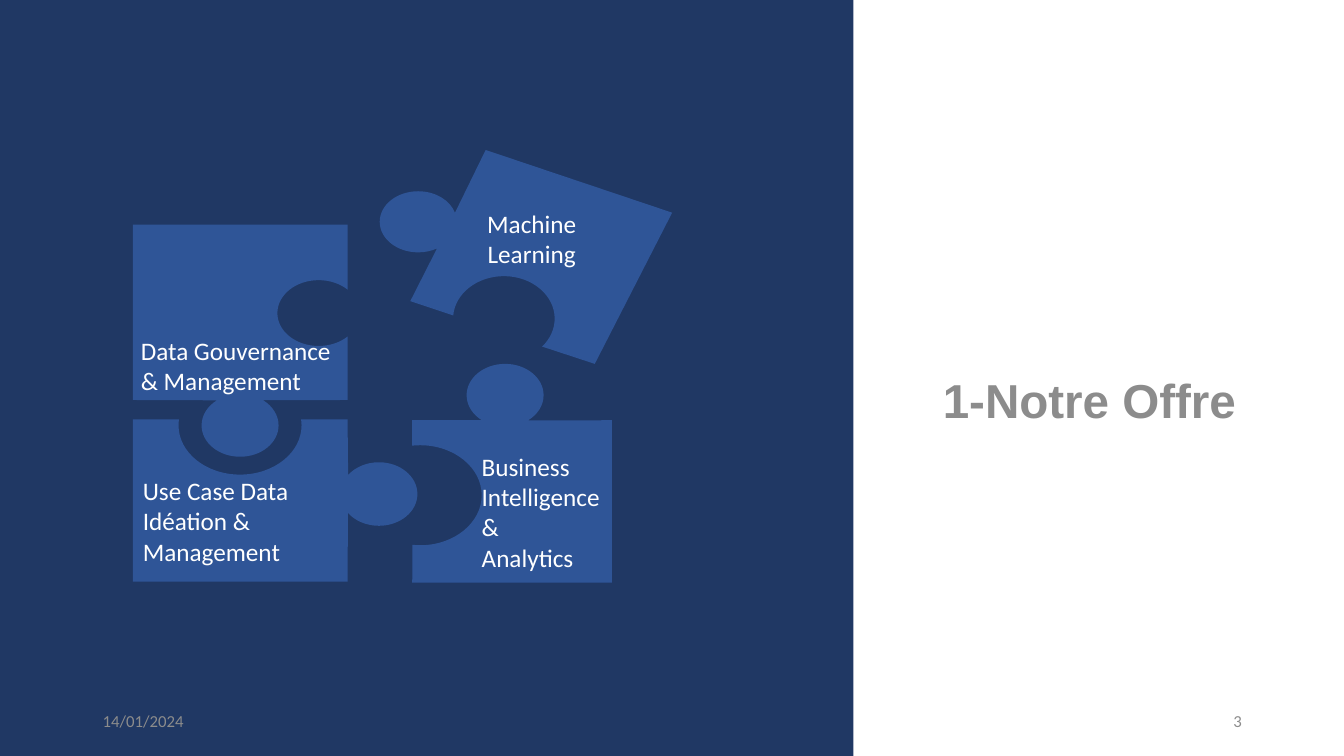
from dataclasses import dataclass
from math import atan2, ceil, cos, floor, pi, sin, tan
from typing import Union

from lxml import etree
from pptx import Presentation
from pptx.dml.color import RGBColor
from pptx.enum.shapes import MSO_SHAPE
from pptx.enum.text import MSO_ANCHOR, MSO_AUTO_SIZE, PP_ALIGN
from pptx.oxml.ns import qn
from pptx.shapes.base import BaseShape
from pptx.slide import Slide
from pptx.util import Cm, Pt

LEFT, CENTER, RIGHT = PP_ALIGN.LEFT, PP_ALIGN.CENTER, PP_ALIGN.RIGHT
MIDDLE = MSO_ANCHOR.MIDDLE
NO_AUTOFIT = MSO_AUTO_SIZE.NONE
RECTANGLE = MSO_SHAPE.RECTANGLE
TITLE_ONLY = 5
QUARTER = pi / 2

Point = tuple[float, float]


@dataclass(frozen=True)
class Theme:
    panel: RGBColor = RGBColor(0x20, 0x38, 0x64)
    piece: RGBColor = RGBColor(0x2F, 0x55, 0x97)
    label: RGBColor = RGBColor(0xFF, 0xFF, 0xFF)
    muted: RGBColor = RGBColor(0x8C, 0x8C, 0x8C)
    title_font: str = "Arial"
    body_font: str = "Calibri"
    title_size: int = 34
    label_size: int = 18
    footer_size: int = 12


@dataclass(frozen=True)
class Arc:
    center: Point
    radii: Point
    entry: Point
    exit: Point
    is_knob: bool

    def at(self, angle: float, slope: float = 0) -> Point:
        return (
            self.center[0] + self.radii[0] * (cos(angle) - slope * sin(angle)),
            self.center[1] + self.radii[1] * (sin(angle) + slope * cos(angle)),
        )

    def angles(self) -> list[float]:
        start, end = (
            atan2((y - self.center[1]) / self.radii[1], (x - self.center[0]) / self.radii[0])
            for x, y in (self.entry, self.exit)
        )
        low, high = (end, start) if self.is_knob else (start, end)
        high = low + (high - low) % (2 * pi)
        quarters = range(ceil(low / QUARTER), floor(high / QUARTER) + 1)
        steps = [low, *(QUARTER * quarter for quarter in quarters), high]
        return steps[::-1] if self.is_knob else steps


@dataclass(frozen=True)
class Label:
    lines: tuple[str, ...]
    left: float
    top: float
    width: float
    height: float
    align: PP_ALIGN = LEFT


@dataclass(frozen=True)
class Piece:
    outline: tuple[Union[Point, Arc], ...]
    label: Label


THEME = Theme()

PIECES = (
    Piece(
        (
            (12.24, 3.78),
            Arc((10.54, 5.59), (0.97, 0.77), (11.48, 5.36), (11.02, 6.27), True),
            (10.34, 7.59),
            Arc((12.7, 8.03), (1.28, 1.07), (11.4, 7.95), (13.67, 8.74), False),
            (14.99, 9.17),
            (16.94, 5.36),
        ),
        Label(("Machine Learning",), 11.15, 4.8, 4.5, 2.41, CENTER),
    ),
    Piece(
        (
            (8.76, 10.57),
            Arc((6.05, 10.72), (1.55, 1.24), (7.59, 10.57), (4.51, 10.57), False),
            (3.35, 10.57),
            (3.35, 14.66),
            (8.76, 14.66),
            Arc((9.55, 12.45), (0.97, 0.8), (8.76, 12.93), (8.76, 11.96), True),
        ),
        Label(("Use Case Data Idéation & Management",), 3.35, 11.18, 5.28, 3.89),
    ),
    Piece(
        (
            (15.42, 10.59),
            Arc((12.73, 9.96), (0.97, 0.79), (13.3, 10.59), (12.14, 10.59), True),
            (10.39, 10.59),
            Arc((10.59, 12.48), (1.55, 1.26), (10.39, 11.23), (10.39, 13.74), False),
            (10.39, 14.68),
            (15.42, 14.68),
        ),
        Label(("Business Intelligence", "&", "Analytics"), 11.89, 11.14, 4.55, 3.51),
    ),
    Piece(
        (
            (8.76, 5.66),
            (3.35, 5.66),
            (3.35, 10.08),
            Arc((6.05, 10.72), (0.97, 0.79), (5.46, 10.08), (6.63, 10.08), True),
            (8.76, 10.08),
            Arc((8.03, 7.89), (1.04, 0.83), (8.76, 8.48), (8.76, 7.3), False),
        ),
        Label(("Data Gouvernance & Management",), 3.3, 7.6, 5.51, 3.23),
    ),
)

FOOTERS = (
    Label(("14/01/2024",), 2.34, 17.65, 7.62, 1.02),
    Label(("3",), 23.93, 17.65, 7.62, 1.02, RIGHT),
)


def paint(shape: BaseShape, color: RGBColor) -> None:
    shape.shadow.inherit = False
    shape.fill.solid()
    shape.fill.fore_color.rgb = color
    shape.line.fill.background()


def add_piece(page: Slide, piece: Piece) -> None:
    vertices: list[Point] = []
    curves: dict[int, tuple[Point, Point, Point]] = {}
    for part in piece.outline:
        if not isinstance(part, Arc):
            vertices.append(part)
            continue
        angles = part.angles()
        vertices.append(part.at(angles[0]))
        for start, end in zip(angles, angles[1:]):
            slope = 4 / 3 * tan((end - start) / 4)
            curves[len(vertices)] = (part.at(start, slope), part.at(end, -slope), part.at(end))
            vertices.append(part.at(end))
    corners = [(Cm(x), Cm(y)) for x, y in vertices]
    builder = page.shapes.build_freeform(*corners[0], scale=1.0)
    builder.add_line_segments(corners[1:], close=True)
    shape = builder.convert_to_shape()
    paint(shape, THEME.piece)
    segments = list(shape._element.iter(qn("a:lnTo")))
    for index, controls in curves.items():
        segment = segments[index - 1]
        curve = etree.Element(qn("a:cubicBezTo"))
        for x, y in controls:
            etree.SubElement(
                curve, qn("a:pt"), x=str(Cm(x) - shape.left), y=str(Cm(y) - shape.top)
            )
        segment.getparent().replace(segment, curve)


def add_label(page: Slide, label: Label, size: int, color: RGBColor) -> None:
    box = page.shapes.add_textbox(
        Cm(label.left), Cm(label.top), Cm(label.width), Cm(label.height)
    )
    frame = box.text_frame
    frame.word_wrap = True
    frame.vertical_anchor = MIDDLE
    frame.text = "\n".join(label.lines)
    for para in frame.paragraphs:
        para.alignment = label.align
        para.font.name = THEME.body_font
        para.font.size = Pt(size)
        para.font.color.rgb = color


def add_title(page: Slide, text: str) -> None:
    title = page.shapes.title
    title.left, title.top, title.width, title.height = Cm(22.45), Cm(7.77), Cm(10.01), Cm(4.17)
    frame = title.text_frame
    frame.text = text
    frame.word_wrap = True
    frame.auto_size = NO_AUTOFIT
    frame.vertical_anchor = MIDDLE
    frame.margin_top = Cm(0.54)
    para = frame.paragraphs[0]
    para.alignment = CENTER
    para.font.name = THEME.title_font
    para.font.size = Pt(THEME.title_size)
    para.font.bold = True
    para.font.color.rgb = THEME.muted


def main() -> None:
    deck = Presentation()
    deck.slide_width, deck.slide_height = Cm(33.87), Cm(19.05)
    page = deck.slides.add_slide(deck.slide_layouts[TITLE_ONLY])
    panel = page.shapes.add_shape(RECTANGLE, Cm(0), Cm(0), Cm(21.51), Cm(19.05))
    paint(panel, THEME.panel)
    add_title(page, "1-Notre Offre")
    for footer in FOOTERS:
        add_label(page, footer, THEME.footer_size, THEME.muted)
    for piece in PIECES:
        add_piece(page, piece)
    for piece in PIECES:
        add_label(page, piece.label, THEME.label_size, THEME.label)
    deck.save("out.pptx")


if __name__ == "__main__":
    main()
